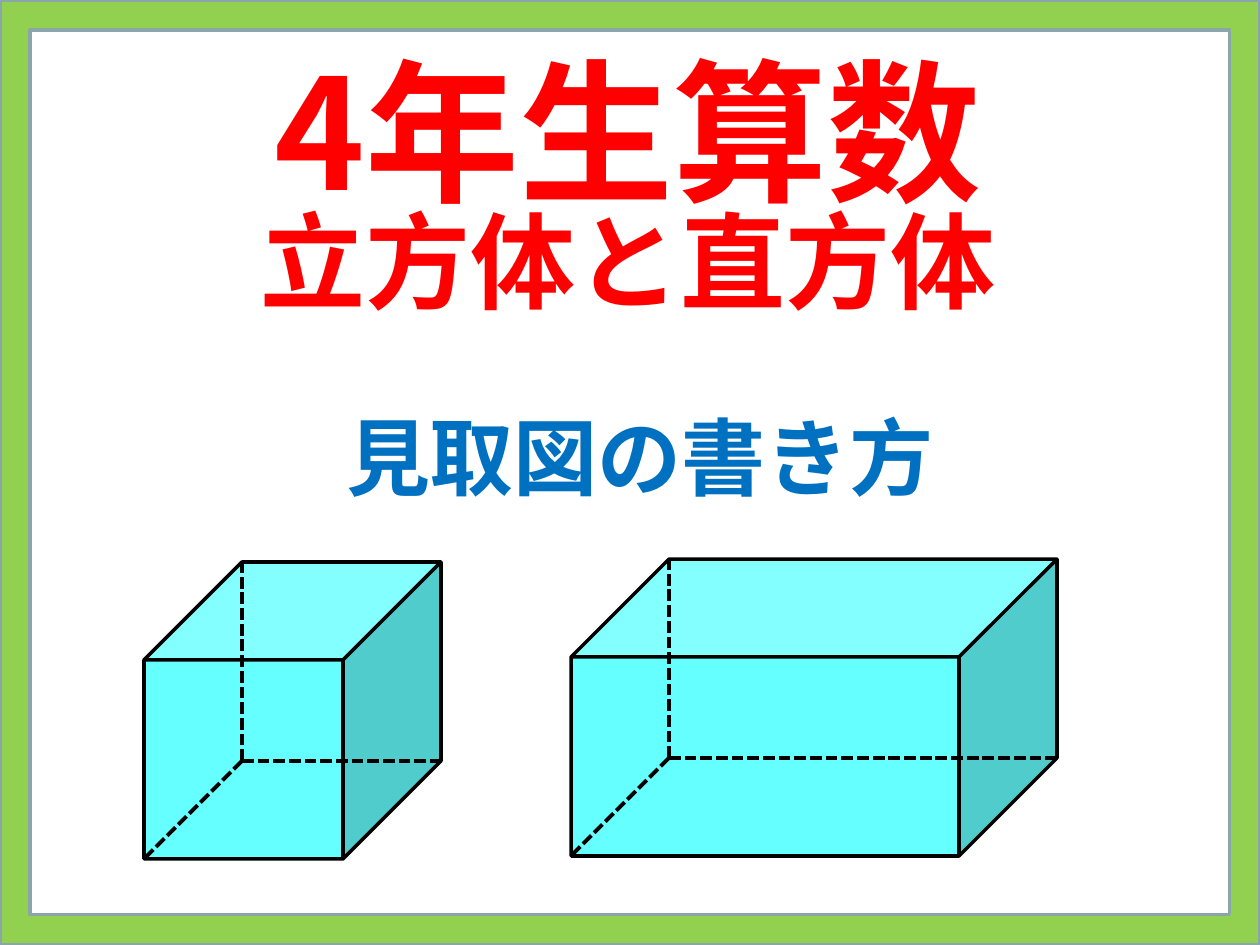
from lxml.etree import SubElement
from pptx import Presentation
from pptx.dml.color import RGBColor
from pptx.enum.dml import MSO_LINE
from pptx.enum.shapes import MSO_CONNECTOR, MSO_SHAPE
from pptx.enum.text import MSO_ANCHOR, MSO_AUTO_SIZE, PP_ALIGN
from pptx.oxml import parse_xml
from pptx.oxml.ns import nsdecls, qn
from pptx.util import Emu, Pt

FONT = "Noto Sans CJK JP"
DEPTH_RATIO = 0.33


def px(n):
    """Turn pixels into EMU."""
    return Emu(round(n * 914400 / 126))


def rgb(value):
    """Turn a hex string into a colour."""
    return RGBColor.from_string(value)


def style_run(r, size, color):
    """Format a run as bold text with a thin white outline."""
    r.font.size, r.font.bold, r.font.name = Pt(size), True, FONT
    r.font.color.rgb = rgb(color)
    rpr = r.font._element
    SubElement(rpr, qn("a:ea")).set("typeface", FONT)
    rpr.insert(0, parse_xml(
        f'<a:ln {nsdecls("a")} w="9525"><a:solidFill>'
        '<a:srgbClr val="FFFFFF"/></a:solidFill></a:ln>'))


def fill_text(sp, box, text, sizes, color, spacing):
    """Place a text shape and format each line of its paragraph."""
    sp.left, sp.top, sp.width, sp.height = map(px, box)
    tf = sp.text_frame
    tf.word_wrap, tf.auto_size = True, MSO_AUTO_SIZE.NONE
    tf.vertical_anchor = MSO_ANCHOR.MIDDLE
    p = tf.paragraphs[0]
    p.text = text
    p.alignment, p.line_spacing = PP_ALIGN.CENTER, spacing
    for r, size in zip(p.runs, sizes):
        style_run(r, size, color)


def add_solid(s, kind, box, adjustment, fill, line):
    """Add a preset shape with a fill and an outline."""
    sp = s.shapes.add_shape(kind, *map(px, box))
    sp.adjustments[0] = adjustment
    sp.shadow.inherit = False
    sp.fill.solid()
    sp.fill.fore_color.rgb = rgb(fill)
    sp.line.color.rgb, sp.line.width = rgb(line), Pt(2)


def add_hidden_edge(s, start, end):
    """Add a dashed edge between two points."""
    c = s.shapes.add_connector(MSO_CONNECTOR.STRAIGHT, *map(px, start + end))
    c.line.color.rgb, c.line.width = rgb("000000"), Pt(2.25)
    c.line.dash_style = MSO_LINE.SQUARE_DOT
    SubElement(c._element.spPr, qn("a:effectLst"))


def add_cuboid(s, left, top, width, height):
    """Add a cuboid with its three hidden edges."""
    add_solid(s, MSO_SHAPE.CUBE, (left, top, width, height), DEPTH_RATIO,
              "66FFFF", "000000")
    depth = round(min(width, height) * DEPTH_RATIO)
    right, bottom = left + width, top + height
    corner = (left + depth, bottom - depth)
    for end in ((corner[0], top), (right, corner[1]), (left, bottom)):
        add_hidden_edge(s, corner, end)


def main():
    """Build the slide and save it."""
    prs = Presentation()
    prs.slide_width, prs.slide_height = px(1260), px(945)
    s = prs.slides.add_slide(prs.slide_layouts[5])
    add_solid(s, MSO_SHAPE.FRAME, (0, 0, 1260, 945), 0.032, "92D050", "8AA6A8")
    title = s.shapes.title
    s.shapes._spTree.append(title._element)
    fill_text(title, (37, 40, 1182, 314), "4年生算数\v立方体と直方体",
              (88, 60), "FF0000", 0.8)
    subtitle = s.shapes.add_textbox(0, 0, 0, 0)
    fill_text(subtitle, (73, 378, 1134, 156), "見取図の書き方", (48,), "0070C0", 1)
    add_cuboid(s, 144, 562, 297, 297)
    add_cuboid(s, 571, 559, 486, 297)
    prs.save("out.pptx")


if __name__ == "__main__":
    main()
